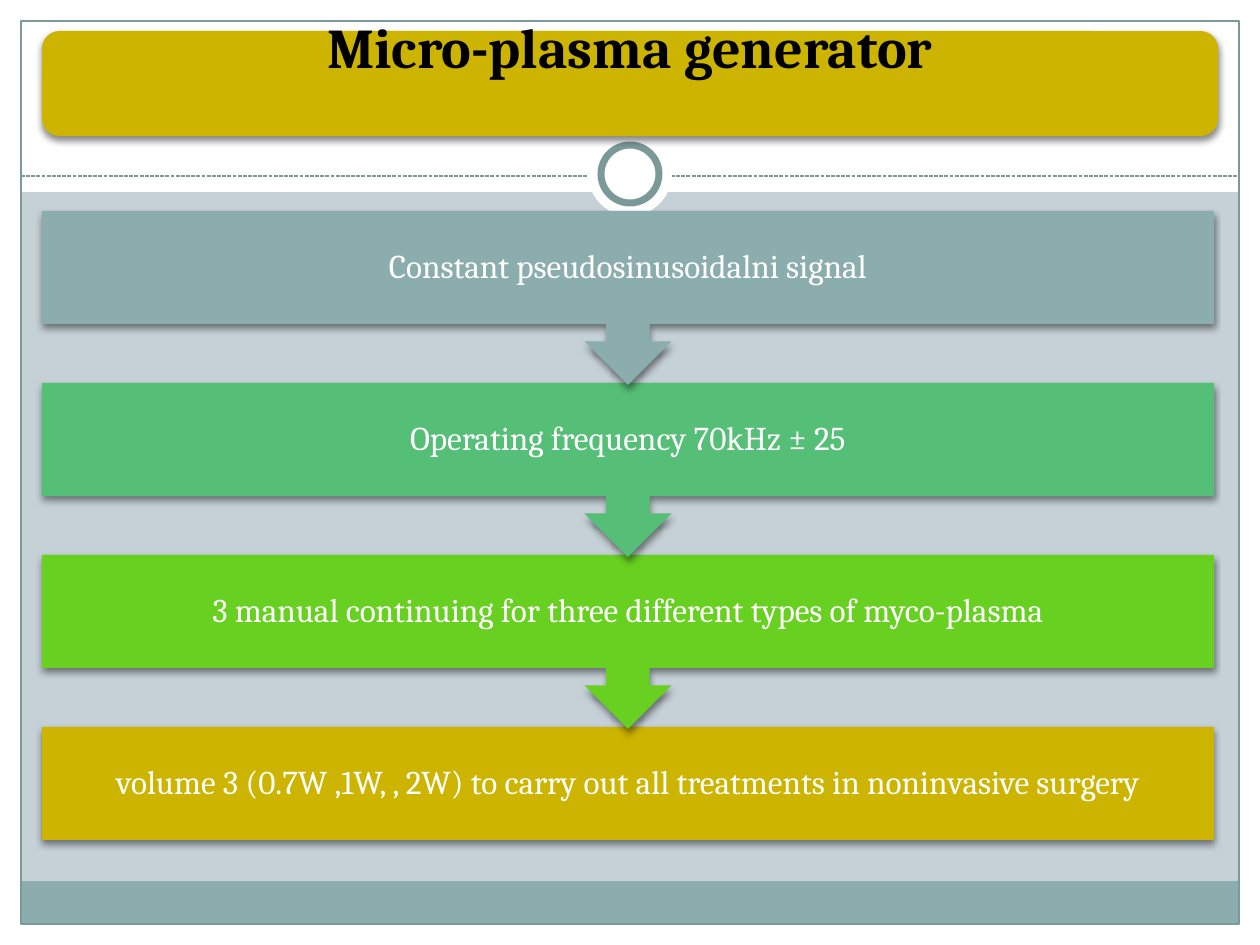
"""Build the micro-plasma generator slide."""
import pptx
import pptx.dml.color
import pptx.enum.dml
import pptx.enum.shapes
import pptx.enum.text
import pptx.oxml
import pptx.oxml.ns
import pptx.util

EMU_PER_PX = 914400 / 126
SLIDE_WIDTH, SLIDE_HEIGHT = 1260, 945
MARGIN = 21
SHAPES = pptx.enum.shapes.MSO_SHAPE
WHITE, TEAL, EDGE, GOLD = "FFFFFF", "8CADAE", "7C999A", "CCB400"
STEPS = [
    ("Constant pseudosinusoidalni signal", TEAL),
    ("Operating frequency 70kHz ± 25", "56BF77"),
    ("3 manual continuing for three different types of myco-plasma", "67D021"),
    ("volume 3 (0.7W ,1W, , 2W) to carry out all treatments in noninvasive surgery", GOLD),
]
STEP_LEFT, STEP_TOP, STEP_WIDTH = 42, 211, 1172
BOX_HEIGHT, CALLOUT_HEIGHT, STEP_PITCH = 113, 174, 172
SHADOW_XML = (
    f'<a:outerShdw {pptx.oxml.ns.nsdecls("a")} blurRad="50800" dist="25400" '
    'dir="5400000" rotWithShape="0"><a:srgbClr val="000000">'
    '<a:alpha val="45000"/></a:srgbClr></a:outerShdw>'
)


def px(length):
    """Turn pixels into EMU."""
    return pptx.util.Emu(round(length * EMU_PER_PX))


def paint(color_format, value):
    """Set a colour from a hex string."""
    color_format.rgb = pptx.dml.color.RGBColor.from_string(value)


def apply(target, values):
    """Set each attribute named in a dict."""
    for name, value in values.items():
        setattr(target, name, value)


def add_block(slide, kind, box, fill=None, line=None, line_width=0.75, shadow=False):
    """Add a preset shape with its fill, outline and optional shadow."""
    shape = slide.shapes.add_shape(kind, *map(px, box))
    shape.shadow.inherit = False
    if fill:
        shape.fill.solid()
        paint(shape.fill.fore_color, fill)
    else:
        shape.fill.background()
    if line:
        paint(shape.line.color, line)
        shape.line.width = pptx.util.Pt(line_width)
    else:
        shape.line.fill.background()
    if shadow:
        effects = shape._element.spPr.find(pptx.oxml.ns.qn("a:effectLst"))
        effects.append(pptx.oxml.parse_xml(SHADOW_XML))
    return shape


def add_dashed_line(slide, left, right, y):
    """Add the dashed rule under the header."""
    connector = slide.shapes.add_connector(
        pptx.enum.shapes.MSO_CONNECTOR.STRAIGHT, px(left), px(y), px(right), px(y))
    paint(connector.line.color, EDGE)
    apply(connector.line, {"width": pptx.util.Pt(0.75),
                           "dash_style": pptx.enum.dml.MSO_LINE.SQUARE_DOT})
    properties = connector._element.spPr
    properties.append(pptx.oxml.parse_xml(f'<a:effectLst {pptx.oxml.ns.nsdecls("a")}/>'))


def write_text(shape, text, size, color, inset, bold=False):
    """Write one centred paragraph in a shape."""
    frame = shape.text_frame
    frame.text = text
    apply(frame, {"word_wrap": True,
                  "auto_size": pptx.enum.text.MSO_AUTO_SIZE.NONE,
                  "vertical_anchor": pptx.enum.text.MSO_ANCHOR.MIDDLE})
    sides = ("left", "top", "right", "bottom")
    apply(frame, {f"margin_{side}": px(inset) for side in sides})
    paragraph = frame.paragraphs[0]
    apply(paragraph, {"alignment": pptx.enum.text.PP_ALIGN.CENTER, "line_spacing": 0.9})
    apply(paragraph.font, {"name": "Cambria", "size": pptx.util.Pt(size), "bold": bold})
    paint(paragraph.font.color, color)


def add_backdrop(slide):
    """Add the white border, footer band, frame and header ring."""
    right, bottom = SLIDE_WIDTH - MARGIN, SLIDE_HEIGHT - MARGIN
    for box in ((0, bottom, SLIDE_WIDTH, MARGIN), (0, 0, SLIDE_WIDTH, 192),
                (0, 0, MARGIN, SLIDE_HEIGHT), (right, 0, MARGIN, SLIDE_HEIGHT)):
        add_block(slide, SHAPES.RECTANGLE, box, WHITE)
    inner_width = right - MARGIN
    add_block(slide, SHAPES.RECTANGLE, (MARGIN, 881, inner_width, bottom - 881), TEAL)
    add_block(slide, SHAPES.RECTANGLE, (MARGIN, MARGIN, inner_width, bottom - MARGIN), line=EDGE)
    add_dashed_line(slide, MARGIN, right, 176)
    add_block(slide, SHAPES.OVAL, (588, 132, 84, 84), WHITE)
    add_block(slide, SHAPES.OVAL, (601, 145, 58, 58), WHITE, EDGE, 4)


def add_title(slide):
    """Add the gold bar and set the title near its top edge."""
    add_block(slide, SHAPES.ROUNDED_RECTANGLE, (42, 31, 1176, 105), GOLD, shadow=True)
    title = slide.shapes.title
    box = map(px, (47, 3, 1166, 94))
    apply(title, dict(zip(("left", "top", "width", "height"), box)))
    write_text(title, "Micro-plasma generator", 32, "000000", 16, bold=True)
    slide.shapes._spTree.append(title._element)


def add_steps(slide):
    """Add the process from the last step up, so each arrow overlaps the next box."""
    last = len(STEPS) - 1
    for index, (text, color) in reversed(list(enumerate(STEPS))):
        kind, height = ((SHAPES.RECTANGLE, BOX_HEIGHT) if index == last
                        else (SHAPES.DOWN_ARROW_CALLOUT, CALLOUT_HEIGHT))
        box = (STEP_LEFT, STEP_TOP + index * STEP_PITCH, STEP_WIDTH, height)
        step = add_block(slide, kind, box, color, shadow=True)
        write_text(step, text, 19, WHITE, 19)


def main():
    """Build and save the slide."""
    presentation = pptx.Presentation()
    apply(presentation, {"slide_width": px(SLIDE_WIDTH), "slide_height": px(SLIDE_HEIGHT)})
    slide = presentation.slides.add_slide(presentation.slide_layouts[5])
    slide.background.fill.solid()
    paint(slide.background.fill.fore_color, "C5D1D7")
    add_backdrop(slide)
    add_title(slide)
    add_steps(slide)
    presentation.save("out.pptx")


if __name__ == "__main__":
    main()
